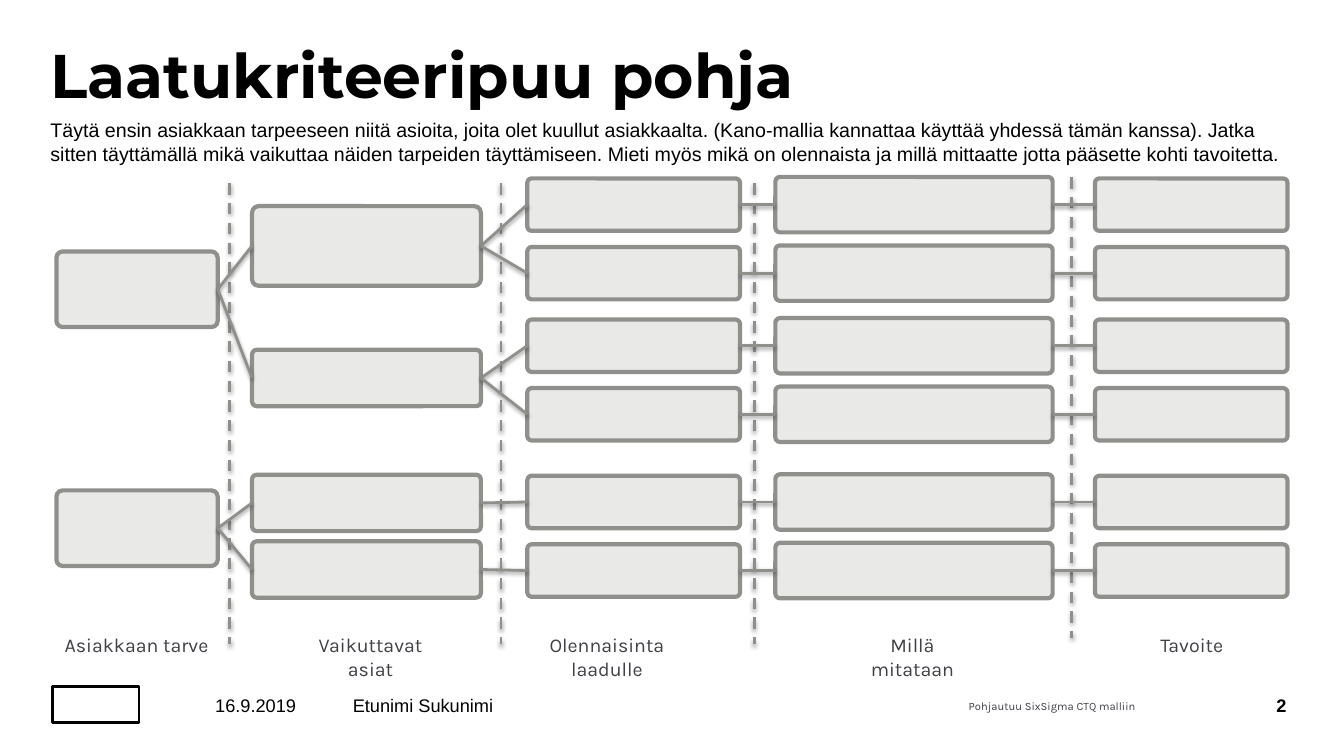
"""Builds a quality criteria tree template slide."""
from dataclasses import dataclass

from lxml import etree
from pptx import Presentation
from pptx import util as u
from pptx.dml import color as col
from pptx.enum import dml, shapes, text
from pptx.oxml import ns

HUES = {"ink": "000000", "label": "404046", "line": "8F8F8C", "fill": "E9E9E8", "paper": "FFFFFF"}
LEFT, MID, RIGHT = text.PP_ALIGN.LEFT, text.PP_ALIGN.CENTER, text.PP_ALIGN.RIGHT
TOP, CORE = text.MSO_ANCHOR.TOP, text.MSO_ANCHOR.MIDDLE
SIDE_L, SIDE_R = 1, 3


@dataclass
class Column:
    left: float
    width: float
    mids: list[float]
    highs: list[float]


@dataclass
class Label:
    words: str
    left: float
    width: float


@dataclass
class Rule:
    left: float
    top: float


ROWS = [top + step for top in (2.03, 3.43, 4.98) for step in (0, 0.68)]
COLUMNS = [
    Column(0.56, 1.6, [2.87, 5.24], [0.75] * 2),
    Column(2.5, 2.27, [2.44, 3.75, 4.99, 5.65], [0.79] + [0.56] * 3),
    Column(5.23, 2.11, ROWS, [0.52] * 6),
    Column(7.69, 2.75, ROWS, [0.55] * 6),
    Column(10.86, 1.91, ROWS, [0.52] * 6),
]
PAIRS = [(n, n) for n in range(len(ROWS))]
LINKS = [
    [(0, 0), (0, 1), (1, 2), (1, 3)],
    [(0, 0), (0, 1), (1, 2), (1, 3), (2, 4), (3, 5)],
    PAIRS,
    PAIRS,
]
RULES = [Rule(2.28, 1.82), Rule(4.97, 1.82), Rule(7.48, 1.82), Rule(10.63, 1.76)]
LABELS = [
    Label("Asiakkaan tarve", 0.5, 1.71),
    Label("Vaikuttavat asiat", 2.9, 1.55),
    Label("Olennaisinta laadulle", 5.08, 1.88),
    Label("Millä mitataan", 8.36, 1.38),
    Label("Tavoite", 11.27, 1.1),
]
GUIDE = (
    "Täytä ensin asiakkaan tarpeeseen niitä asioita, joita olet kuullut asiakkaalta. "
    "(Kano-mallia kannattaa käyttää yhdessä tämän kanssa). Jatka sitten täyttämällä mikä "
    "vaikuttaa näiden tarpeiden täyttämiseen. Mieti myös mikä on olennaista ja millä "
    "mittaatte jotta pääsette kohti tavoitetta."
)


def hue(name: str) -> col.RGBColor:
    return col.RGBColor.from_string(HUES[name])


def write(slide, words: str, left: float, top: float, width: float, height: float, *,
          size: float = 14, font: str = "Arial", tint: str = "ink", bold: bool = False,
          align=LEFT, anchor=TOP, pad: tuple[float, float] = (0, 0), space: float = 1.0) -> None:
    area = slide.shapes.add_textbox(*map(u.Inches, (left, top, width, height)))
    frame = area.text_frame
    frame.word_wrap = True
    frame.vertical_anchor = anchor
    frame.margin_left = frame.margin_right = u.Inches(pad[0])
    frame.margin_top = frame.margin_bottom = u.Inches(pad[1])
    para = frame.paragraphs[0]
    para.alignment, para.line_spacing = align, space
    run = para.add_run()
    run.text = words
    run.font.size, run.font.name, run.font.bold = u.Pt(size), font, bold
    run.font.color.rgb = hue(tint)


def block(slide, kind, left: float, top: float, width: float, height: float,
          fill: str, edge: str, weight: float):
    shape = slide.shapes.add_shape(kind, *map(u.Inches, (left, top, width, height)))
    shape.shadow.inherit = False
    shape.fill.solid()
    shape.fill.fore_color.rgb = hue(fill)
    shape.line.color.rgb = hue(edge)
    shape.line.width = u.Pt(weight)
    return shape


def stack(slide, column: Column) -> list:
    cards = []
    for mid, high in zip(column.mids, column.highs):
        card = block(slide, shapes.MSO_SHAPE.ROUNDED_RECTANGLE, column.left, mid - high / 2,
                     column.width, high, "fill", "line", 3)
        card.adjustments[0] = 0.083
        cards.append(card)
    return cards


def stroke(slide, left: float, top: float, right: float, base: float):
    line = slide.shapes.add_connector(shapes.MSO_CONNECTOR.STRAIGHT,
                                      *map(u.Inches, (left, top, right, base)))
    line.line.color.rgb = hue("line")
    line.line.width = u.Pt(2)
    props = line._element.spPr
    glow = etree.SubElement(props, ns.qn("a:effectLst"))
    shade = etree.SubElement(glow, ns.qn("a:outerShdw"), blurRad=str(u.Pt(3.1)),
                             dist=str(u.Pt(1.6)), dir="5400000", rotWithShape="0")
    tone = etree.SubElement(shade, ns.qn("a:srgbClr"), val=HUES["ink"])
    etree.SubElement(tone, ns.qn("a:alpha"), val="38000")
    return line


def link(slide, start, end) -> None:
    line = stroke(slide, 0, 0, 1, 1)
    line.begin_connect(start, SIDE_R)
    line.end_connect(end, SIDE_L)


def main() -> None:
    deck = Presentation()
    deck.slide_width, deck.slide_height = u.Inches(13.33), u.Inches(7.5)
    slide = deck.slides.add_slide(deck.slide_layouts[6])

    block(slide, shapes.MSO_SHAPE.RECTANGLE, 0.52, 6.81, 0.86, 0.36, "paper", "ink", 2)
    write(slide, "Laatukriteeripuu pohja", 0.5, 0.45, 12.29, 0.72,
          size=44, font="Montserrat", bold=True, space=0.9)
    write(slide, GUIDE, 0.5, 1.17, 12.29, 0.49)
    write(slide, "16.9.2019", 1.82, 6.86, 1.43, 0.28, size=13, align=MID, anchor=CORE)
    write(slide, "Etunimi Sukunimi", 3.5, 6.86, 4.5, 0.28, size=13, anchor=CORE)
    write(slide, "2", 11.41, 6.86, 1.35, 0.28, size=13, bold=True, align=RIGHT, anchor=CORE)
    write(slide, "Pohjautuu SixSigma CTQ malliin", 9.51, 6.89, 2.34, 0.23,
          size=8, font="Karla", tint="label", pad=(0.1, 0.05))

    for rule in RULES:
        line = stroke(slide, rule.left, rule.top, rule.left, rule.top + 4.57)
        line.line.dash_style = dml.MSO_LINE.DASH
    for label in LABELS:
        write(slide, label.words, label.left, 6.23, label.width, 0.32,
              font="Karla", tint="label", align=MID, pad=(0.1, 0.05))

    tree = [stack(slide, column) for column in COLUMNS]
    for start, end, links in zip(tree, tree[1:], LINKS):
        for a, b in links:
            link(slide, start[a], end[b])

    deck.save("out.pptx")


if __name__ == "__main__":
    main()
